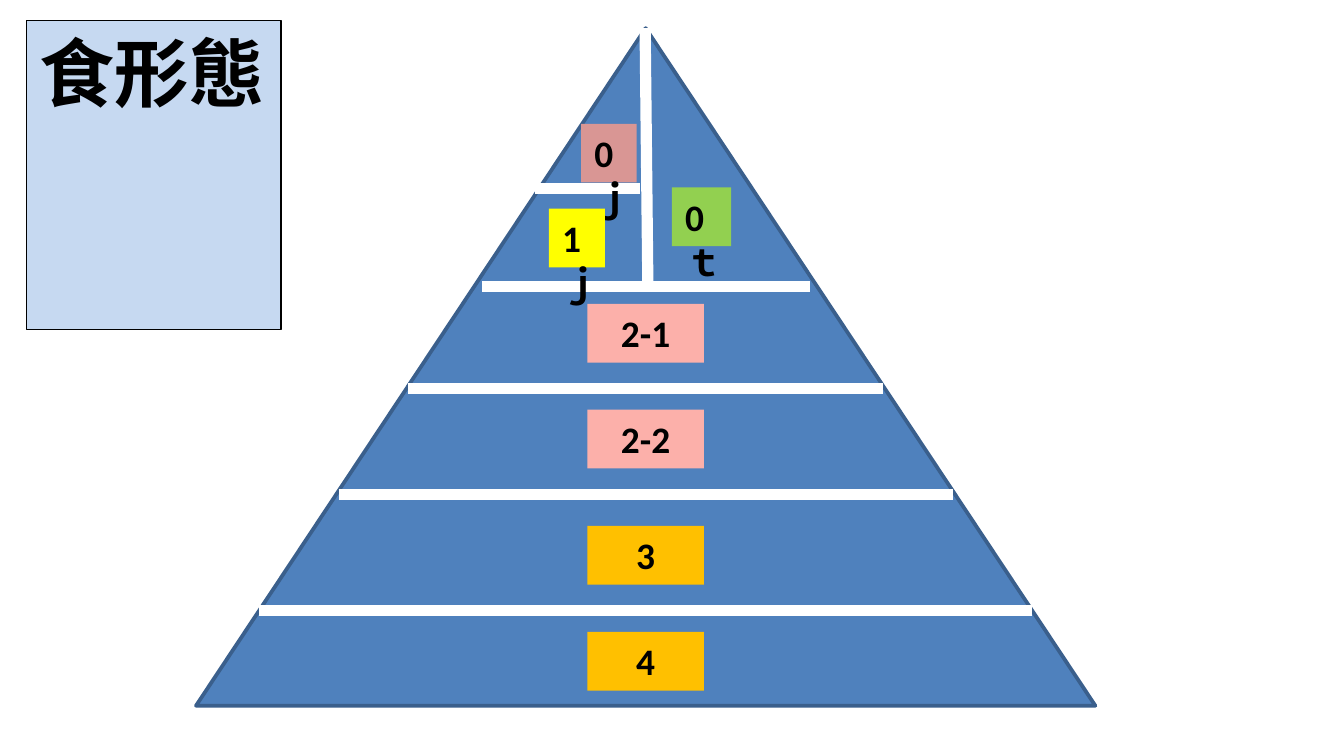
from dataclasses import dataclass

from lxml import etree
from pptx import Presentation
from pptx.dml.color import RGBColor
from pptx.enum import shapes, text
from pptx.oxml.ns import qn
from pptx.util import Pt


@dataclass(frozen=True)
class Theme:
    font: str = "Calibri"
    title_size: float = 40
    label_size: float = 20
    ink: str = "000000"
    title_fill: str = "C6D9F1"
    pyramid: str = "4F81BD"
    pyramid_edge: str = "3A5F8C"
    divider: str = "FFFFFF"
    rose: str = "D99694"
    yellow: str = "FFFF00"
    green: str = "92D050"
    pink: str = "FCB0AA"
    orange: str = "FFC000"


THEME = Theme()
TITLE_BOX = (14.2, 11, 136.4, 55.7)
PYRAMID_BOX = (105, 15.1, 481.8, 363)
LABEL_HEIGHT = 31.5


def paint(fill, color):
    fill.solid()
    fill.fore_color.rgb = RGBColor.from_string(color)


def outline(line, color, width):
    paint(line.fill, color)
    line.width = Pt(width)


def write(shape, words, size, align, wrap):
    frame = shape.text_frame
    frame.word_wrap = wrap
    frame.auto_size = text.MSO_AUTO_SIZE.SHAPE_TO_FIT_TEXT
    frame.vertical_anchor = text.MSO_ANCHOR.TOP
    paragraph = frame.paragraphs[0]
    paragraph.alignment = align
    run = paragraph.add_run()
    run.text = words
    run.font.name = THEME.font
    run.font.size = Pt(size)
    run.font.bold = True
    run.font.color.rgb = RGBColor.from_string(THEME.ink)


def add_title(slide, box):
    title = slide.shapes.title
    title.left, title.top, title.width, title.height = map(Pt, box)
    paint(title.fill, THEME.title_fill)
    outline(title.line, THEME.ink, 0.75)
    write(title, "食形態", THEME.title_size, text.PP_ALIGN.LEFT, False)


def add_divider(slide, x1, y1, x2, y2):
    line = slide.shapes.add_connector(
        shapes.MSO_CONNECTOR.STRAIGHT, Pt(x1), Pt(y1), Pt(x2), Pt(y2))
    outline(line.line, THEME.divider, 6)
    properties = line._element.find(qn("p:spPr"))
    etree.SubElement(properties, qn("a:effectLst"))


def add_label(slide, words, x, y, width, color, centred):
    label = slide.shapes.add_textbox(Pt(x), Pt(y), Pt(width), Pt(LABEL_HEIGHT))
    paint(label.fill, color)
    align = text.PP_ALIGN.CENTER if centred else text.PP_ALIGN.LEFT
    write(label, words, THEME.label_size, align, centred)


def add_pyramid(slide, box):
    left, top, width, height = box
    axis = left + width / 2
    triangle = slide.shapes.add_shape(
        shapes.MSO_SHAPE.ISOSCELES_TRIANGLE, *map(Pt, box))
    triangle.shadow.inherit = False
    paint(triangle.fill, THEME.pyramid)
    outline(triangle.line, THEME.pyramid_edge, 2)

    # Level boundaries: drop below the apex, half length
    for drop, half in ((311.8, 207), (249.9, 164.5), (193, 127.4), (138.3, 87.8)):
        add_divider(slide, axis - half, top + drop, axis + half, top + drop)
    add_divider(slide, axis - 0.3, top, axis + 1.2, top + 138.3)
    add_divider(slide, axis - 59.3, top + 85.7, axis - 3.1, top + 85.7)

    # Tip labels: offset from the axis, drop below the apex, width
    for words, offset, drop, label_width, color in (
            ("0ｊ", -34.6, 51.2, 29.8, THEME.rose),
            ("1ｊ", -51.8, 96.7, 30, THEME.yellow),
            ("0ｔ", 14.1, 85.3, 31.7, THEME.green)):
        add_label(slide, words, axis + offset, top + drop, label_width, color, False)

    base_width = 62.4
    for words, drop, color in (
            ("2-1", 147.7, THEME.pink), ("2-2", 204.3, THEME.pink),
            ("3", 266.7, THEME.orange), ("4", 323.4, THEME.orange)):
        add_label(slide, words, axis - base_width / 2, top + drop,
                  base_width, color, True)


def main():
    presentation = Presentation()
    presentation.slide_width, presentation.slide_height = Pt(720), Pt(405)
    slide = presentation.slides.add_slide(presentation.slide_layouts[5])
    add_title(slide, TITLE_BOX)
    add_pyramid(slide, PYRAMID_BOX)
    presentation.save("out.pptx")


if __name__ == "__main__":
    main()
